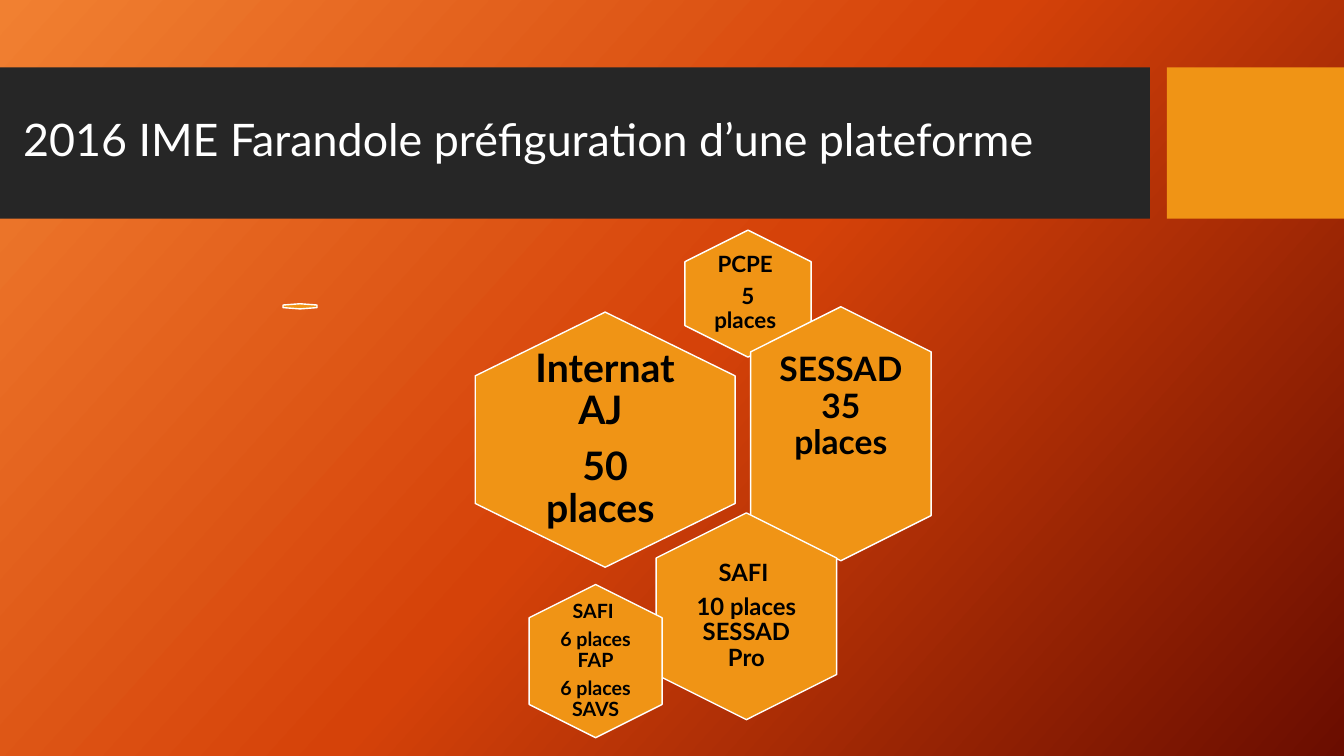
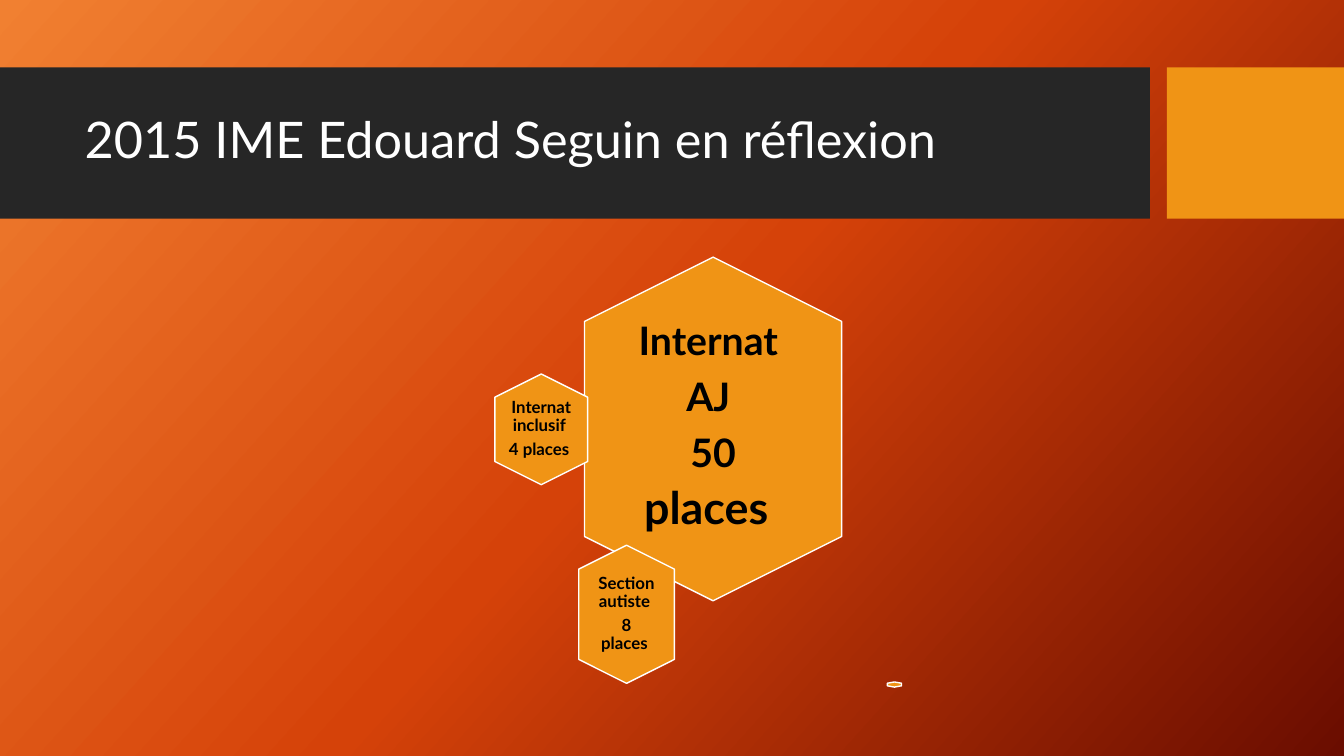
from copy import deepcopy

from pptx import Presentation
from pptx.dml.color import RGBColor
from pptx.enum.shapes import MSO_SHAPE
from pptx.enum.text import MSO_ANCHOR, MSO_AUTO_SIZE, PP_ALIGN
from pptx.util import Cm, Pt

RECTANGLE = MSO_SHAPE.RECTANGLE
HEXAGON = MSO_SHAPE.HEXAGON
LEFT = PP_ALIGN.LEFT
CENTER = PP_ALIGN.CENTER
MIDDLE = MSO_ANCHOR.MIDDLE
NO_AUTOFIT = MSO_AUTO_SIZE.NONE

WHITE = RGBColor(0xFF, 0xFF, 0xFF)
BLACK = RGBColor(0x00, 0x00, 0x00)
CHARCOAL = RGBColor(0x26, 0x26, 0x26)
ORANGE = RGBColor(0xF0, 0x94, 0x15)
GRADIENT = (
    (0, RGBColor(0xF1, 0x80, 0x31)),
    (0.5, RGBColor(0xD5, 0x42, 0x09)),
    (1, RGBColor(0x6A, 0x0D, 0x00)),
)

FONT = "Lato"
SLIDE_WIDTH, SLIDE_HEIGHT = 33.87, 19.05
BAND_TOP, BAND_HEIGHT = 1.7, 3.81
TITLE_RIGHT = 28.6
TITLE_ONLY = 5


def add_text(paragraph, text, size, color=BLACK, bold=False, align=CENTER,
             space_after=0):
    """Append a formatted run and set the paragraph's spacing."""
    paragraph.alignment = align
    paragraph.line_spacing = 0.9
    paragraph.space_after = Pt(space_after)
    run = paragraph.add_run()
    run.text = text
    run.font.name = FONT
    run.font.size = Pt(size)
    run.font.bold = bold
    run.font.color.rgb = color


class Deck:
    """Shared style and the current slide."""

    def __init__(self):
        self.presentation = Presentation()
        self.presentation.slide_width = Cm(SLIDE_WIDTH)
        self.presentation.slide_height = Cm(SLIDE_HEIGHT)
        self.layout = self.presentation.slide_layouts[TITLE_ONLY]
        self.slide = None
        self.set_background()

    def set_background(self):
        fill = self.presentation.slide_master.background.fill
        fill.gradient()
        fill.gradient_angle = 360 - 42
        stop_list = self.presentation.slide_master.element.find(
            ".//{*}bg//{*}gsLst")
        stop_list.append(deepcopy(stop_list[-1]))
        for stop, (position, color) in zip(fill.gradient_stops, GRADIENT):
            stop.position = position
            stop.color.rgb = color

    def add_slide(self, title, title_left, title_size):
        first = self.slide is None
        self.slide = self.presentation.slides.add_slide(self.layout)
        if first:
            self.add_layout_bands()
        placeholder = self.slide.shapes.title
        placeholder.left, placeholder.top = Cm(title_left), Cm(2.08)
        placeholder.width, placeholder.height = Cm(TITLE_RIGHT - title_left), Cm(3)
        frame = placeholder.text_frame
        frame.auto_size = NO_AUTOFIT
        frame.vertical_anchor = MIDDLE
        add_text(frame.paragraphs[0], title, title_size, WHITE, align=LEFT)

    def add_layout_bands(self):
        """Draw the title bands, then hand them to the layout, behind titles."""
        for placeholder in list(self.layout.placeholders)[1:]:
            self.layout.shapes.element.remove(placeholder.element)
        bands = [
            self.add_shape(RECTANGLE, 0, BAND_TOP, 28.98, BAND_HEIGHT, CHARCOAL),
            self.add_shape(RECTANGLE, 29.41, BAND_TOP, SLIDE_WIDTH - 29.41,
                           BAND_HEIGHT, ORANGE),
        ]
        for band in bands:
            self.layout.shapes.element.insert(2, band.element)

    def add_shape(self, kind, left, top, width, height, color):
        shape = self.slide.shapes.add_shape(
            kind, Cm(left), Cm(top), Cm(width), Cm(height))
        shape.shadow.inherit = False
        shape.fill.solid()
        shape.fill.fore_color.rgb = color
        shape.line.fill.background()
        return shape

    def add_hexagon(self, center_x, center_y, width, height):
        """Add a point-up hexagon; its frame is turned, so sides swap."""
        shape = self.add_shape(HEXAGON, center_x - height / 2,
                               center_y - width / 2, height, width, ORANGE)
        shape.rotation = 90
        shape.line.color.rgb = WHITE
        shape.line.width = Pt(1)

    def add_label(self, center_x, center_y, width, height, lines, size,
                  margin=0, bottom=None):
        """Add centred text; a line is a string or a list of (text, size)."""
        box = self.slide.shapes.add_textbox(
            Cm(center_x - width / 2), Cm(center_y - height / 2),
            Cm(width), Cm(height))
        frame = box.text_frame
        frame.word_wrap = True
        frame.auto_size = NO_AUTOFIT
        frame.vertical_anchor = MIDDLE
        frame.margin_left = frame.margin_right = frame.margin_top = Cm(margin)
        frame.margin_bottom = Cm(margin if bottom is None else bottom)
        for index, line in enumerate(lines):
            paragraph = frame.add_paragraph() if index else frame.paragraphs[0]
            runs = [(line, size)] if isinstance(line, str) else line
            for text, run_size in runs:
                add_text(paragraph, text, run_size, bold=True,
                         space_after=0.35 * size)

    def add_cell(self, center, hexagon_size, label_size, lines, size, **margins):
        """Add a hexagon with a label on the same centre."""
        self.add_hexagon(*center, *hexagon_size)
        self.add_label(*center, *label_size, lines, size, **margins)


def main():
    deck = Deck()

    # Farandole platform
    deck.add_slide("2016 IME Farandole préfiguration d’une plateforme", 0.33, 32)
    deck.add_cell((18.85, 7.4), (3.18, 3.2), (2.11, 2.13),
                  ["PCPE ", "5 places "], 16, margin=0.18)
    deck.add_hexagon(7.56, 7.72, 0.86, 0.13)
    deck.add_cell((15.25, 11.08), (6.55, 6.43), (4.37, 4.29),
                  ["Internat AJ ", "50 places "], 28, margin=0.3)
    deck.add_cell((21.19, 10.93), (4.55, 6.4), (3.25, 4.6),
                  ["SESSAD 35 places"], 24, bottom=1.33)
    deck.add_cell((18.81, 15.53), (4.55, 5.21), (3.12, 3.58),
                  ["SAFI ", "10 places SESSAD Pro"], 17, margin=0.18)
    deck.add_cell((15.01, 16.66), (3.35, 3.86), (2.31, 2.67),
                  ["SAFI ", "6 places FAP", "6 places SAVS"], 14)

    # Edouard Seguin
    deck.add_slide("2015 IME Edouard Seguin en réflexion", 1.88, 36)
    deck.add_cell((17.97, 10.81), (6.48, 8.66), (4.6, 6.15),
                  ["Internat ", "AJ ", [("50 ", 28), ("places", 32), (" ", 40)]],
                  28, margin=0.3)
    deck.add_cell((13.64, 10.82), (2.34, 2.79), (1.63, 1.93),
                  ["Internat inclusif ", "4 places "], 12)
    deck.add_cell((15.79, 15.48), (2.41, 3.48), (1.73, 2.49),
                  ["Section autiste ", "8 places "], 12, margin=0.13)
    deck.add_hexagon(22.54, 17.25, 0.36, 0.13)

    deck.presentation.save("out.pptx")


if __name__ == "__main__":
    main()
